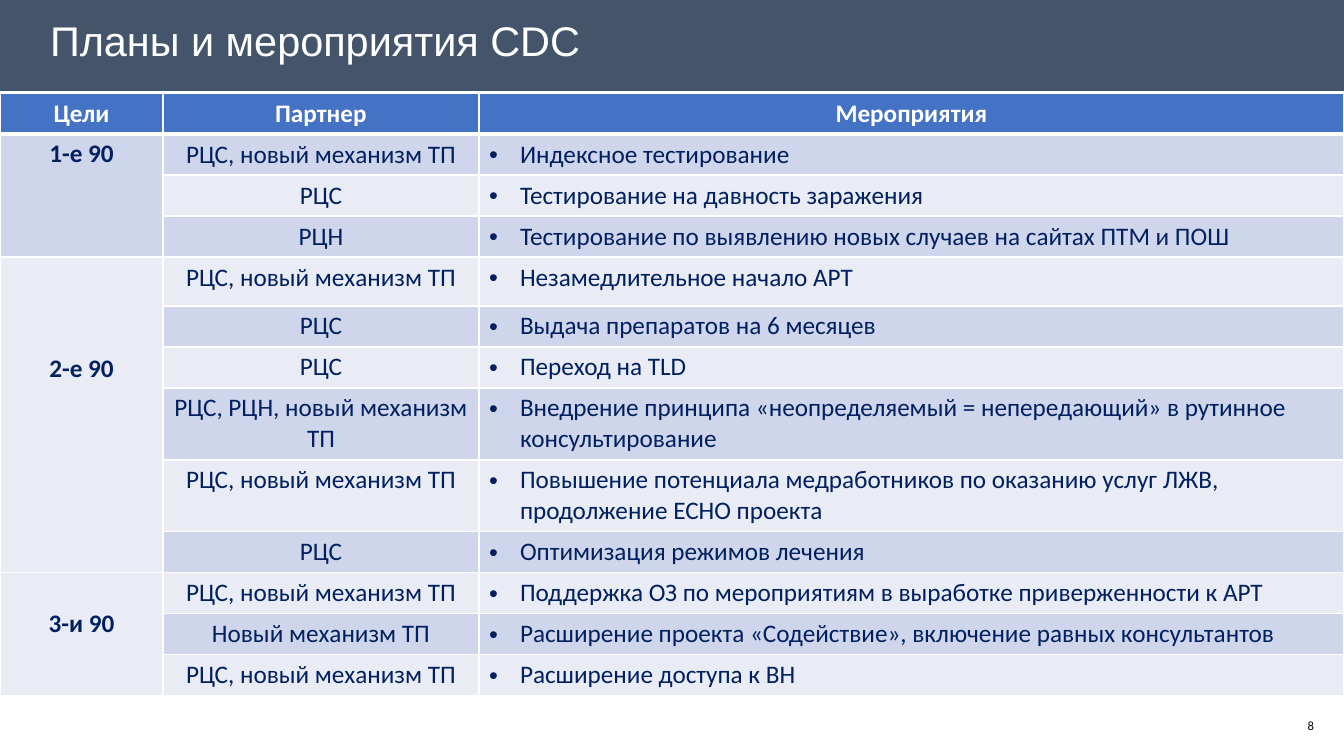
from lxml import etree
from pptx import Presentation
from pptx import util as u
from pptx.dml.color import RGBColor
from pptx.enum import shapes, text
from pptx.oxml.ns import qn

PX = 914400 / 100.8  # EMU in one px
WHITE, NAVY, SLATE, BLUE = "FFFFFF", "002060", "44546A", "4472C4"
STRIPES = ("E9EBF5", "CFD5EA")  # even and odd table rows
LEFT, CENTER, RIGHT = text.PP_ALIGN.LEFT, text.PP_ALIGN.CENTER, text.PP_ALIGN.RIGHT

HEADERS = ("Цели", "Партнер", "Мероприятия")
COLUMN_WIDTHS = (163, 316, 865)
HEADER_HEIGHT = 41
RCS_NEW = "РЦС, новый механизм ТП"
# Goal, top margin of its label, then (partner, activity, row height)
GOALS = (
    ("1-е 90", 5, (
        (RCS_NEW, "Индексное тестирование", 41),
        ("РЦС", "Тестирование на давность заражения", 41),
        ("РЦН", "Тестирование по выявлению новых случаев на сайтах ПТМ и ПОШ", 41),
    )),
    ("2-е 90", 97, (
        (RCS_NEW, "Незамедлительное начало АРТ", 49),
        ("РЦС", "Выдача препаратов на 6 месяцев", 41),
        ("РЦС", "Переход на TLD", 41),
        ("РЦС, РЦН, новый механизм ТП",
         "Внедрение принципа «неопределяемый = непередающий» в рутинное консультирование", 72),
        (RCS_NEW,
         "Повышение потенциала медработников по оказанию услуг ЛЖВ, продолжение ECHO проекта", 72),
        ("РЦС", "Оптимизация режимов лечения", 41),
    )),
    ("3-и 90", 36, (
        (RCS_NEW, "Поддержка ОЗ по мероприятиям в выработке приверженности к АРТ", 41),
        ("Новый механизм ТП", "Расширение проекта «Содействие», включение равных консультантов", 41),
        (RCS_NEW, "Расширение доступа к ВН", 41),
    )),
)


def px(length):
    return u.Emu(round(length * PX))


def rgb(color):
    return RGBColor.from_string(color)


def write(frame, words, size=18, font="Calibri", color=NAVY, bold=False,
          align=CENTER, bullet=False, spacing=None):
    paragraph = frame.paragraphs[0]
    if bullet:
        props = paragraph._p.get_or_add_pPr()
        props.set("marL", str(px(31)))
        props.set("indent", str(-px(31)))
        etree.SubElement(props, qn("a:buFont"), typeface="Arial")
        etree.SubElement(props, qn("a:buChar"), char="•")
    paragraph.alignment = align
    if spacing:
        paragraph.line_spacing = spacing
    run = paragraph.add_run()
    run.text = words
    run.font.size, run.font.name, run.font.bold = u.Pt(size), font, bold
    run.font.color.rgb = rgb(color)


def style_cell(cell, fill, bottom=1, top=1):
    props = cell._tc.get_or_add_tcPr()
    for side, width in (("L", 1), ("R", 1), ("T", top), ("B", bottom)):
        line = etree.SubElement(props, qn("a:ln" + side), w=str(u.Pt(width)))
        solid = etree.SubElement(line, qn("a:solidFill"))
        etree.SubElement(solid, qn("a:srgbClr"), val=WHITE)
    cell.fill.solid()
    cell.fill.fore_color.rgb = rgb(fill)


def add_title(slide, words):
    # Band behind the title
    band = slide.shapes.add_shape(shapes.MSO_SHAPE.RECTANGLE, 0, 0, px(1344), px(91))
    band.shadow.inherit = False
    band.fill.solid()
    band.fill.fore_color.rgb = rgb(SLATE)
    band.line.fill.background()
    slide.shapes._spTree.insert(2, band._element)

    title = slide.shapes.title
    title.left, title.top, title.width, title.height = px(50), px(29), px(1264), px(50)
    frame = title.text_frame
    frame.margin_left = frame.margin_top = frame.margin_right = frame.margin_bottom = 0
    frame.vertical_anchor = text.MSO_ANCHOR.TOP
    frame.auto_size = text.MSO_AUTO_SIZE.NONE
    write(frame, words, size=29.6, font="Arial", color=WHITE, align=LEFT, spacing=0.7)


def add_plan_table(slide):
    heights = [HEADER_HEIGHT] + [row[2] for goal in GOALS for row in goal[2]]
    table = slide.shapes.add_table(len(heights), len(HEADERS), 0, px(93),
                                   px(sum(COLUMN_WIDTHS)), px(sum(heights))).table
    for column, width in zip(table.columns, COLUMN_WIDTHS):
        column.width = px(width)
    for row, height in zip(table.rows, heights):
        row.height = px(height)

    # Header row
    for index, header in enumerate(HEADERS):
        cell = table.cell(0, index)
        style_cell(cell, BLUE, bottom=3)
        write(cell.text_frame, header, color=WHITE, bold=True)

    # One merged goal cell beside its activities
    first = 1
    for goal, label_top, activities in GOALS:
        for number, (partner, activity, _) in enumerate(activities, first):
            for cell in table.rows[number].cells:
                style_cell(cell, STRIPES[number % 2], top=3 if number == 1 else 1)
            write(table.cell(number, 1).text_frame, partner)
            write(table.cell(number, 2).text_frame, activity, align=LEFT, bullet=True)
        goal_cell = table.cell(first, 0)
        goal_cell.merge(table.cell(first + len(activities) - 1, 0))
        goal_cell.margin_top = px(label_top)
        write(goal_cell.text_frame, goal, bold=True)
        first += len(activities)


def add_page_number(slide, number):
    frame = slide.shapes.add_textbox(px(1259), px(706), px(65), px(40)).text_frame
    frame.word_wrap = True
    frame.vertical_anchor = text.MSO_ANCHOR.MIDDLE
    write(frame, number, size=9, color="050606", align=RIGHT)


def main():
    deck = Presentation()
    deck.slide_width, deck.slide_height = px(1344), px(756)
    slide = deck.slides.add_slide(deck.slide_layouts[5])
    add_title(slide, "Планы и мероприятия CDC")
    add_plan_table(slide)
    add_page_number(slide, "8")
    deck.save("out.pptx")


if __name__ == "__main__":
    main()
